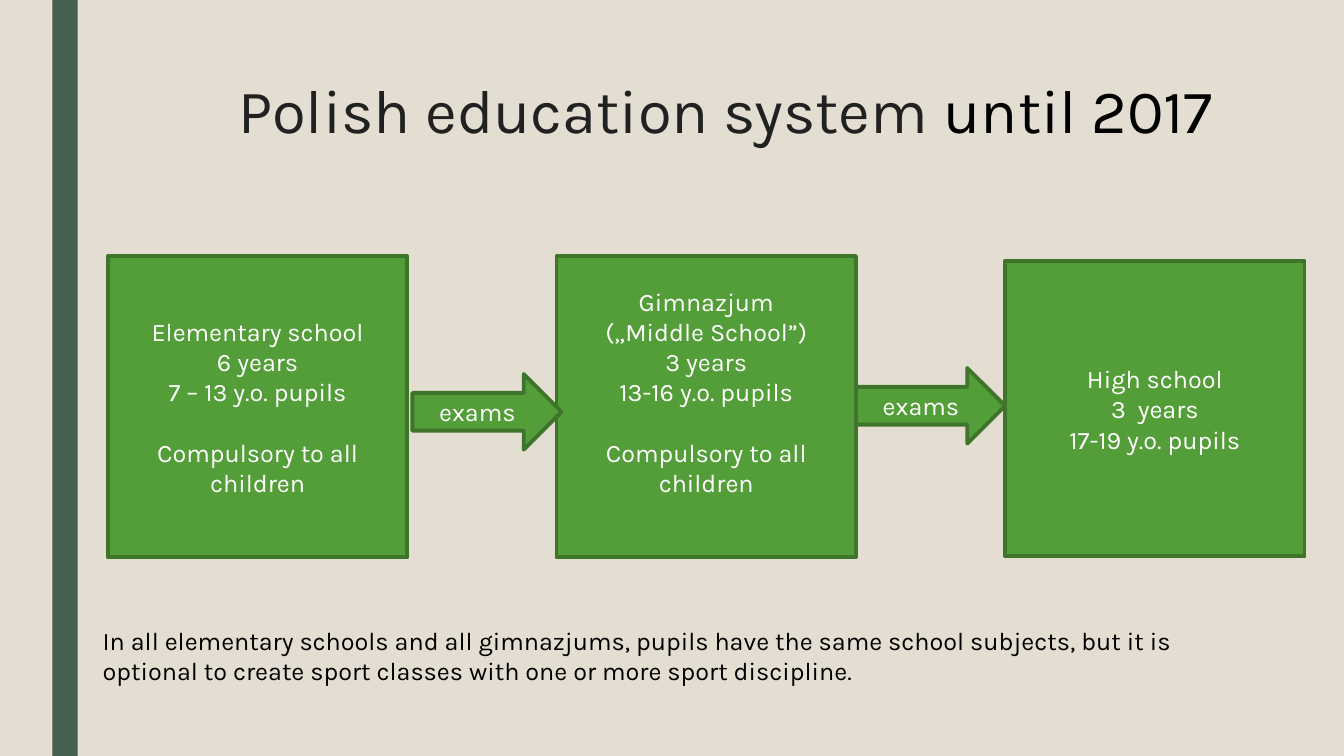
"""Build the slide on the Polish education system until 2017."""
from dataclasses import dataclass

from pptx import Presentation
from pptx.dml.color import RGBColor
from pptx.enum.shapes import MSO_SHAPE
from pptx.enum.text import MSO_ANCHOR, PP_ALIGN
from pptx.util import Inches, Pt

WIDTH, HEIGHT = Inches(13.333), Inches(7.5)
FONT = "Karla"
COLORS = {
    "background": "E3DED1",
    "bar": "455F51",
    "box": "549E39",
    "outline": "3E752A",
    "title": "212121",
    "black": "000000",
    "white": "FFFFFF",
}
SCHOOL_LEFT, SCHOOL_PITCH, SCHOOL_WIDTH = 8.03, 33.38, 22.28
BLANK_LINE = Pt(21.5)
COMPULSORY = "Compulsory to all children"


@dataclass(frozen=True)
class Area:
    """A rectangle in percent of the slide's width and height."""
    left: float
    top: float
    width: float
    height: float

    def box(self) -> tuple[int, int, int, int]:
        """Return left, top, width and height in slide units."""
        return (int(WIDTH * self.left / 100), int(HEIGHT * self.top / 100),
                int(WIDTH * self.width / 100), int(HEIGHT * self.height / 100))


@dataclass(frozen=True)
class Block:
    """A green shape with centred lines of text."""
    kind: MSO_SHAPE
    area: Area
    lines: tuple[str, ...]
    bottom_space: int = 0


def school(column: int, top: float, height: float, *lines: str, bottom_space: int = 0) -> Block:
    """Describe the school in the given column."""
    area = Area(SCHOOL_LEFT + column * SCHOOL_PITCH, top, SCHOOL_WIDTH, height)
    return Block(MSO_SHAPE.RECTANGLE, area, lines, bottom_space)


def exams(left: float, top: float) -> Block:
    """Describe an arrow between two schools."""
    return Block(MSO_SHAPE.RIGHT_ARROW, Area(left, top, 11.1, 10), ("exams",))


BLOCKS = (
    school(0, 33.87, 39.87, "Elementary school", "6 years", "7 – 13 y.o. pupils", COMPULSORY),
    exams(63.68, 48.67),
    school(1, 33.87, 39.87, "Gimnazjum", "(„Middle School”)", "3 years",
           "13-16 y.o. pupils", COMPULSORY, bottom_space=BLANK_LINE),
    school(2, 34.53, 39.07, "High school", "3  years", "17-19 y.o. pupils"),
    exams(30.68, 49.47),
)
TITLE = (("Polish education system ", "title"), ("until 2017", "black"))
NOTE = (("In all elementary schools and all gimnazjums, pupils have the same school subjects, "
         "but it is optional to create sport classes with one or more sport discipline.", "black"),)


def color(name: str) -> RGBColor:
    """Look up a named colour."""
    return RGBColor.from_string(COLORS[name])


def add_run(paragraph, text: str, size: float, color_name: str) -> None:
    """Add one run of styled text."""
    run = paragraph.add_run()
    run.text = text
    run.font.name = FONT
    run.font.size = Pt(size)
    run.font.color.rgb = color(color_name)


def add_filled(slide, kind: MSO_SHAPE, area: Area, fill: str):
    """Add a flat shape without an outline."""
    shape = slide.shapes.add_shape(kind, *area.box())
    shape.shadow.inherit = False
    shape.fill.solid()
    shape.fill.fore_color.rgb = color(fill)
    shape.line.fill.background()
    return shape


def add_block(slide, block: Block) -> None:
    """Draw a school or an arrow with its text."""
    shape = add_filled(slide, block.kind, block.area, "box")
    shape.line.color.rgb = color("outline")
    shape.line.width = Pt(2.75)
    frame = shape.text_frame
    frame.word_wrap = True
    frame.vertical_anchor = MSO_ANCHOR.MIDDLE
    frame.margin_bottom = Inches(0.05) + block.bottom_space
    for index, line in enumerate(block.lines):
        paragraph = frame.add_paragraph() if index else frame.paragraphs[0]
        paragraph.alignment = PP_ALIGN.CENTER
        if line == COMPULSORY:
            paragraph.space_before = BLANK_LINE
        add_run(paragraph, line, 18, "white")


def add_text(slide, area: Area, runs: tuple[tuple[str, str], ...], size: float):
    """Add a wrapped text box and return its paragraph."""
    frame = slide.shapes.add_textbox(*area.box()).text_frame
    frame.word_wrap = True
    paragraph = frame.paragraphs[0]
    for text, color_name in runs:
        add_run(paragraph, text, size, color_name)
    return paragraph


def main() -> None:
    """Build and save the presentation."""
    presentation = Presentation()
    presentation.slide_width, presentation.slide_height = WIDTH, HEIGHT
    slide = presentation.slides.add_slide(presentation.slide_layouts[6])
    slide.background.fill.solid()
    slide.background.fill.fore_color.rgb = color("background")
    add_filled(slide, MSO_SHAPE.RECTANGLE, Area(3.9, 0, 1.88, 100), "bar")
    title = add_text(slide, Area(11.25, 10, 85.5, 14.27), TITLE, 44)
    title.alignment = PP_ALIGN.CENTER
    title.line_spacing = 0.89
    for block in BLOCKS:
        add_block(slide, block)
    add_text(slide, Area(6.9, 82, 87.75, 9.47), NOTE, 18)
    presentation.save("out.pptx")


if __name__ == "__main__":
    main()
